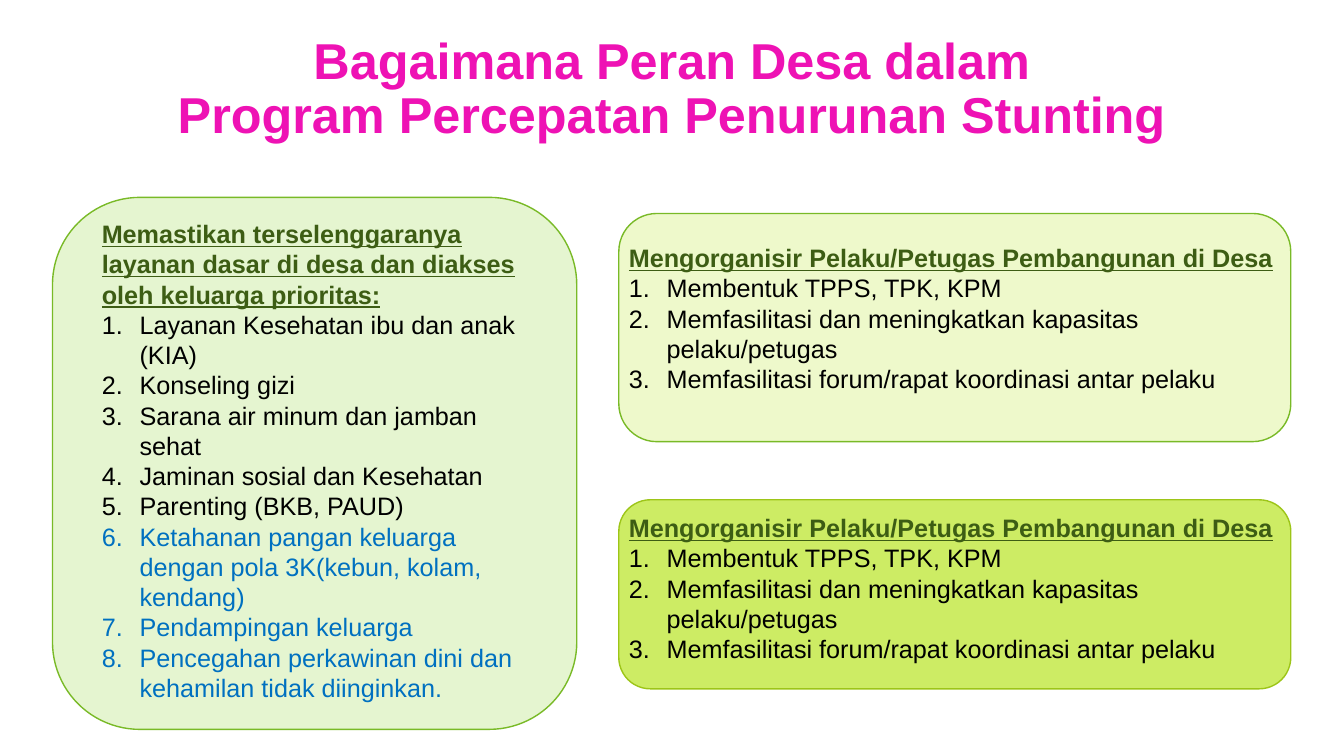
"""Build a slide on the role of villages in reducing stunting."""
import pptx
import pptx.dml.color
import pptx.enum.shapes
import pptx.enum.text
import pptx.oxml.ns
import pptx.util
from lxml import etree

Pt = pptx.util.Pt
RGBColor = pptx.dml.color.RGBColor
qn = pptx.oxml.ns.qn

PINK = RGBColor(0xEE, 0x12, 0xB4)
DARK_GREEN = RGBColor(0x3D, 0x5D, 0x14)
BLACK = RGBColor(0x00, 0x00, 0x00)
BLUE = RGBColor(0x00, 0x70, 0xC0)
GREEN_LINE = RGBColor(0x79, 0xBA, 0x27)
LIME_LINE = RGBColor(0x9D, 0xC5, 0x18)
LIME = RGBColor(0xCD, 0xEC, 0x64)
PALE_LIME = RGBColor(0xEE, 0xF9, 0xCB)
PALE_GREEN = RGBColor(0xE5, 0xF5, 0xD0)


def write(paragraph, text, size=18, color=BLACK, bold=False, underline=False,
          numbered=False, alignment=pptx.enum.text.PP_ALIGN.LEFT, spacing=1.0):
    paragraph.text = text
    paragraph.alignment = alignment
    paragraph.line_spacing = spacing
    paragraph.space_before = Pt(0)
    properties = paragraph._p.get_or_add_pPr()
    indent = Pt(27) if numbered else 0
    properties.set("marL", str(indent))
    properties.set("indent", str(-indent))
    if numbered:
        etree.SubElement(properties, qn("a:buFont"), typeface="+mj-lt")
        etree.SubElement(properties, qn("a:buAutoNum"), type="arabicPeriod")
    else:
        etree.SubElement(properties, qn("a:buNone"))
    for run in paragraph.runs:
        run.font.name = "Arial"
        run.font.size = Pt(size)
        run.font.bold = bold
        run.font.underline = underline
        run.font.color.rgb = color


def place(shape, left, top, width, height):
    shape.left, shape.top = Pt(left), Pt(top)
    shape.width, shape.height = Pt(width), Pt(height)


presentation = pptx.Presentation()
presentation.slide_width, presentation.slide_height = Pt(960), Pt(540)
slide = presentation.slides.add_slide(
    presentation.slide_layouts.get_by_name("Comparison"))
placeholders = {shape.placeholder_format.idx: shape for shape in slide.placeholders}

title = slide.shapes.title
place(title, 0, 36, 960, 57)
title.text_frame.auto_size = pptx.enum.text.MSO_AUTO_SIZE.NONE
title.text_frame.vertical_anchor = pptx.enum.text.MSO_ANCHOR.MIDDLE
write(title.text_frame.paragraphs[0],
      "Bagaimana Peran Desa dalam\vProgram Percepatan Penurunan Stunting",
      size=36, color=PINK, bold=True, spacing=0.9,
      alignment=pptx.enum.text.PP_ALIGN.CENTER)
for line_break in title.element.iter(qn("a:br")):
    etree.SubElement(line_break, qn("a:rPr"), sz="3600")

panels = [
    ((442, 357, 480, 135), LIME, LIME_LINE),
    ((442, 152.5, 480, 163), PALE_LIME, GREEN_LINE),
    ((37.5, 141, 374.5, 380), PALE_GREEN, GREEN_LINE),
]
for box, fill, line in panels:
    panel = slide.shapes.add_shape(
        pptx.enum.shapes.MSO_SHAPE.ROUNDED_RECTANGLE, *map(Pt, box))
    panel.shadow.inherit = False
    panel.fill.solid()
    panel.fill.fore_color.rgb = fill
    panel.line.color.rgb = line
    panel.line.width = Pt(1)
    title.element.addprevious(panel.element)

services = [
    ("Layanan Kesehatan ibu dan anak (KIA)", BLACK),
    ("Konseling gizi", BLACK),
    ("Sarana air minum dan jamban sehat", BLACK),
    ("Jaminan sosial dan Kesehatan", BLACK),
    ("Parenting (BKB, PAUD)", BLACK),
    ("Ketahanan pangan keluarga dengan pola 3K(kebun, kolam, kendang)", BLUE),
    ("Pendampingan keluarga", BLUE),
    ("Pencegahan perkawinan dini dan kehamilan tidak diinginkan.", BLUE),
]
organizing = [
    ("Membentuk TPPS, TPK, KPM", BLACK),
    ("Memfasilitasi dan meningkatkan kapasitas pelaku/petugas", BLACK),
    ("Memfasilitasi forum/rapat koordinasi antar pelaku", BLACK),
]
services_heading = ("Memastikan terselenggaranya layanan dasar di desa "
                    "dan diakses oleh keluarga prioritas:")
organizing_heading = "Mengorganisir Pelaku/Petugas Pembangunan di Desa"
lists = [
    (1, (65.5, 152.5, 318.5, 356.5), services_heading, services),
    (2, (442, 169.5, 480, 116.5), organizing_heading, organizing),
    (4, (442, 362.5, 480, 116.5), organizing_heading, organizing),
]
for index, box, heading, items in lists:
    body = placeholders[index]
    place(body, *box)
    frame = body.text_frame
    frame.word_wrap = True
    frame.auto_size = pptx.enum.text.MSO_AUTO_SIZE.SHAPE_TO_FIT_TEXT
    frame.vertical_anchor = pptx.enum.text.MSO_ANCHOR.TOP
    write(frame.paragraphs[0], heading, color=DARK_GREEN, bold=True, underline=True)
    for text, color in items:
        write(frame.add_paragraph(), text, color=color, numbered=True)

unused = placeholders[3].element
unused.getparent().remove(unused)

presentation.save("out.pptx")
